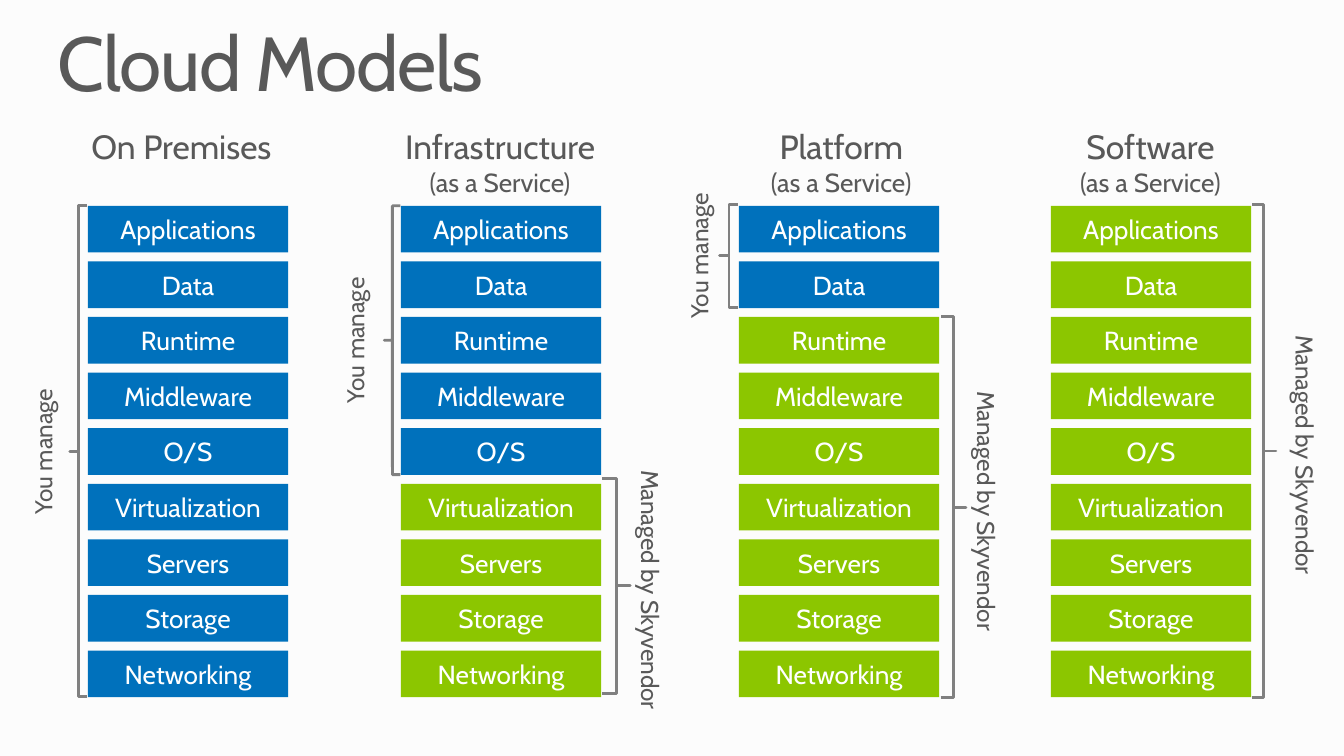
import pptx
import pptx.dml.color
import pptx.enum.shapes
import pptx.enum.text
import pptx.util

Pt = pptx.util.Pt
ALIGN = pptx.enum.text.PP_ALIGN
ANCHOR = pptx.enum.text.MSO_ANCHOR
SHAPE = pptx.enum.shapes.MSO_SHAPE

FONT = "Cabin"
GREY, BLUE, GREEN, BRACE_GREY = "595959", "0071BC", "8CC600", "808080"

LAYERS = ["Applications", "Data", "Runtime", "Middleware", "O/S",
          "Virtualization", "Servers", "Storage", "Networking"]
LAYER_TOP, LAYER_STEP = 110.3, 29.78
LAYER_WIDTH, LAYER_HEIGHT = 107.3, 25
HEADING_TOP, HEADING_HEIGHT = 67.7, 42
LABEL_WIDTH = 30.2

# Per model: name, subtitle, heading left and width, stack left, own layers,
# then the braces as (side, left, top, width, height, label left)
MODELS = [
    ("On Premises", None, 36, 122.4, 47.1, 9,
     [("you", 37.4, 110.3, 9.4, 263, 11.5)]),
    ("Infrastructure", "(as a Service)", 182.9, 170, 214.8, 5,
     [("provider", 322.6, 256.3, 15, 115.2, 329.8),
      ("you", 205.9, 110.3, 8.6, 144, 178.6)]),
    ("Platform", "(as a Service)", 385.2, 131, 395.9, 2,
     [("provider", 504, 169.7, 13.5, 204, 509.8),
      ("you", 385.5, 109.4, 10, 55.4, 362.9)]),
    ("Software", "(as a Service)", 550.1, 132.5, 563, 0,
     [("provider", 670.5, 109.4, 13, 264.4, 680.4)]),
]

# Label text, text direction and label length for each side
SIDES = {"you": ("You manage", "vert270", 78.5),
         "provider": ("Managed by Skyvendor", "eaVert", 138.2)}


def color(hex_code):
    return pptx.dml.color.RGBColor.from_string(hex_code)


def write(frame, text, size=14, fill=GREY, align=ALIGN.CENTER,
          line_spacing=None, tracking=None):
    """Fill the empty first paragraph of the frame, or add another one."""
    paragraph = frame.paragraphs[0] if not frame.text else frame.add_paragraph()
    paragraph.alignment = align
    paragraph.line_spacing = line_spacing
    run = paragraph.add_run()
    run.text = text
    run.font.name, run.font.size = FONT, Pt(size)
    run.font.color.rgb = color(fill)
    if tracking is not None:
        run.font._element.set("spc", str(int(tracking * 100)))


def set_frame(frame, anchor=ANCHOR.TOP, side=0, edge=0, wrap=True):
    frame.word_wrap = wrap
    frame.vertical_anchor = anchor
    frame.margin_left = frame.margin_right = Pt(side)
    frame.margin_top = frame.margin_bottom = Pt(edge)


class CloudSlide:
    def __init__(self, slide):
        self.slide = slide
        self.column = None
        slide.background.fill.solid()
        slide.background.fill.fore_color.rgb = color("FCFCFC")

    def title(self, text):
        title = self.slide.shapes.title
        title.left, title.top = Pt(31), Pt(13.7)
        title.width, title.height = Pt(658.8), Pt(44.6)
        set_frame(title.text_frame)
        title.text_frame.auto_size = pptx.enum.text.MSO_AUTO_SIZE.NONE
        write(title.text_frame, text, size=41, align=ALIGN.LEFT,
              line_spacing=0.9, tracking=-0.8)

    def start_column(self):
        self.column = self.slide.shapes.add_group_shape().shapes

    def shape(self, kind, left, top, width, height):
        shape = self.column.add_shape(kind, Pt(left), Pt(top), Pt(width), Pt(height))
        shape.shadow.inherit = False
        return shape

    def textbox(self, left, top, width, height):
        return self.column.add_textbox(Pt(left), Pt(top), Pt(width), Pt(height)).text_frame

    def heading(self, name, subtitle, left, width):
        frame = self.textbox(left, HEADING_TOP, width, HEADING_HEIGHT)
        set_frame(frame)
        write(frame, name, size=18)
        if subtitle:
            write(frame, subtitle)

    def layer(self, name, left, row, fill):
        box = self.shape(SHAPE.RECTANGLE, left, LAYER_TOP + row * LAYER_STEP,
                         LAYER_WIDTH, LAYER_HEIGHT)
        box.fill.solid()
        box.fill.fore_color.rgb = color(fill)
        box.line.fill.background()
        set_frame(box.text_frame, anchor=ANCHOR.MIDDLE, edge=3.6)
        write(box.text_frame, name, fill="FFFFFF")

    def brace(self, side, left, top, width, height, label_left):
        brace = self.shape(SHAPE.LEFT_BRACE, left, top, width, height)
        brace.adjustments[0], brace.adjustments[1] = 0, 0.5
        brace.fill.background()
        brace.line.color.rgb = color(BRACE_GREY)
        brace.line.width = Pt(1.5)
        if side == "provider":
            brace._element.spPr.xfrm.set("flipH", "1")

        # Turned label, centred on the brace
        text, direction, length = SIDES[side]
        frame = self.textbox(label_left, top + (height - length) / 2, LABEL_WIDTH, length)
        set_frame(frame, side=7.2, edge=3.6, wrap=False)
        frame._txBody.bodyPr.set("vert", direction)
        write(frame, text, size=13)


def main():
    deck = pptx.Presentation()
    deck.slide_width, deck.slide_height = Pt(720), Pt(405)
    page = CloudSlide(deck.slides.add_slide(deck.slide_layouts[5]))
    page.title("Cloud Models")

    # One group per cloud model
    for name, subtitle, heading_left, heading_width, left, own, braces in MODELS:
        page.start_column()
        page.heading(name, subtitle, heading_left, heading_width)
        for row, layer in enumerate(LAYERS):
            page.layer(layer, left, row, BLUE if row < own else GREEN)
        for brace in braces:
            page.brace(*brace)

    deck.save("out.pptx")


if __name__ == "__main__":
    main()
